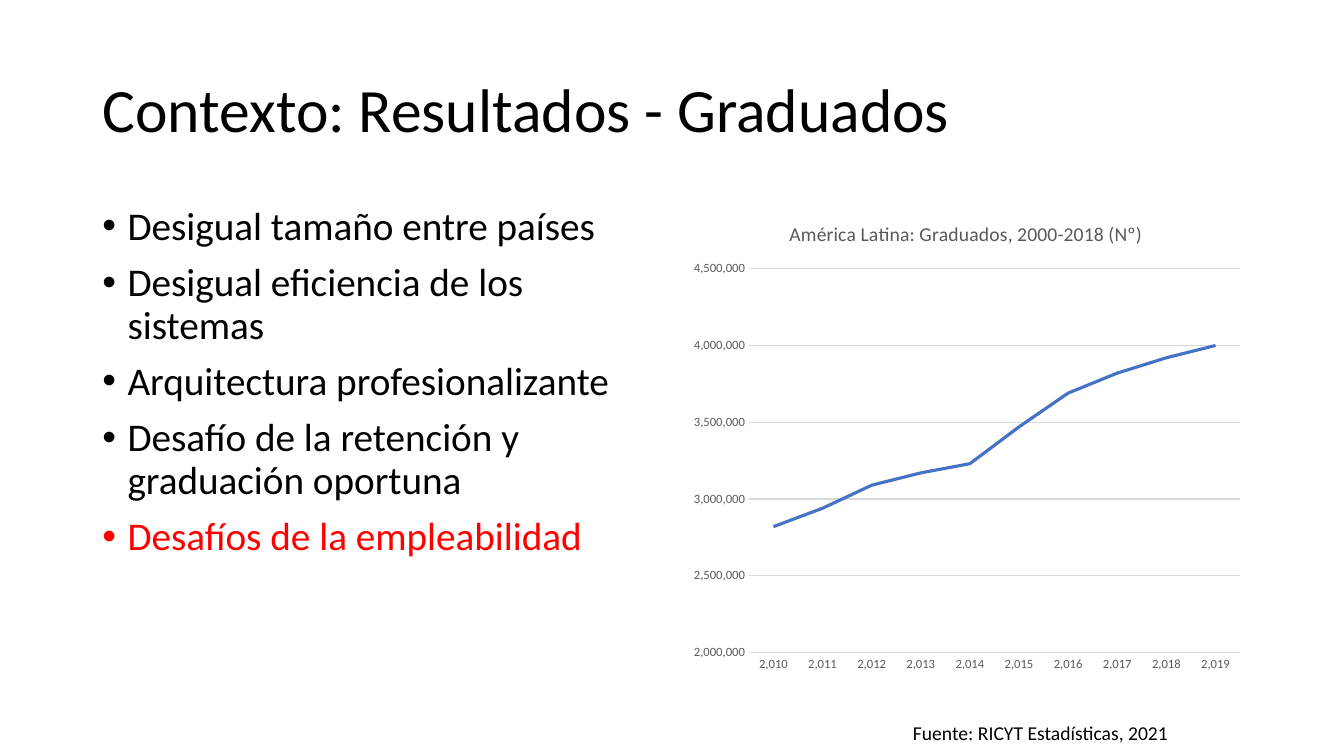
from dataclasses import dataclass

from lxml import etree
from pptx import Presentation
from pptx import util as u
from pptx.chart.data import CategoryChartData
from pptx.dml.color import RGBColor
from pptx.enum import chart as charts, text
from pptx.oxml import parse_xml
from pptx.oxml.ns import nsdecls, qn

EMU_PER_PX = 9525
FONT = "Calibri"
COLORS = {
    "text": "000000",
    "accent": "FF0000",
    "label": "595959",
    "grid": "D9D9D9",
    "series": "4472C4",
}


@dataclass
class Box:
    left: int
    top: int
    width: int
    height: int

    def emu(self) -> list[int]:
        return [px * EMU_PER_PX for px in (self.left, self.top, self.width, self.height)]


@dataclass
class Line:
    words: str
    color: str = "text"


@dataclass
class TextBlock:
    box: Box
    lines: list[Line]
    size: int
    anchor: text.MSO_ANCHOR = text.MSO_ANCHOR.TOP
    wrap: bool = True
    bullets: bool = False
    line_spacing: float = 1.0


TEXT_BLOCKS = [
    TextBlock(Box(88, 38, 1104, 139), [Line("Contexto: Resultados - Graduados")], 44,
              anchor=text.MSO_ANCHOR.MIDDLE, line_spacing=0.9),
    TextBlock(Box(88, 192, 544, 457), [
        Line("Desigual tamaño entre países"),
        Line("Desigual eficiencia de los sistemas"),
        Line("Arquitectura profesionalizante"),
        Line("Desafío de la retención y graduación oportuna"),
        Line("Desafíos de la empleabilidad", "accent"),
    ], 28, bullets=True, line_spacing=0.9),
    TextBlock(Box(860, 682, 265, 33), [Line("Fuente: RICYT Estadísticas, 2021")], 14, wrap=False),
]

CHART_BOX = Box(648, 192, 544, 457)
CHART_TITLE = "América Latina: Graduados, 2000-2018 (Nº)"
FIRST_YEAR = 2010
GRADUATES = [2820000, 2940000, 3090000, 3170000, 3230000,
             3470000, 3690000, 3820000, 3920000, 4000000]
NUMBER_FORMAT = "#,##0"
PLOT_AREA = {"x": 0.12, "y": 0.14, "w": 0.86, "h": 0.8}


def rgb(name: str) -> RGBColor:
    return RGBColor.from_string(COLORS[name])


def style_font(font, size: int, color: str) -> None:
    font.name = FONT
    font.size = u.Pt(size)
    font.bold = False
    font.color.rgb = rgb(color)


def style_line(line, color: str, width: float) -> None:
    line.color.rgb = rgb(color)
    line.width = u.Pt(width)


def add_bullet(paragraph) -> None:
    indent = 24 * EMU_PER_PX
    properties = paragraph._p.get_or_add_pPr()
    properties.set("marL", str(indent))
    properties.set("indent", str(-indent))
    font = etree.SubElement(properties, qn("a:buFont"))
    font.set("typeface", "Arial")
    bullet = etree.SubElement(properties, qn("a:buChar"))
    bullet.set("char", "•")


def add_text(slide, block: TextBlock) -> None:
    frame = slide.shapes.add_textbox(*block.box.emu()).text_frame
    frame.word_wrap = block.wrap
    frame.vertical_anchor = block.anchor
    for index, line in enumerate(block.lines):
        paragraph = frame.add_paragraph() if index else frame.paragraphs[0]
        paragraph.line_spacing = block.line_spacing
        if block.bullets:
            paragraph.space_before = u.Pt(10)
            add_bullet(paragraph)
        run = paragraph.add_run()
        run.text = line.words
        style_font(run.font, block.size, line.color)


def style_axis(axis) -> None:
    axis.major_tick_mark = charts.XL_TICK_MARK.NONE
    axis.minor_tick_mark = charts.XL_TICK_MARK.NONE
    style_font(axis.tick_labels.font, 9, "label")
    axis.tick_labels.number_format = NUMBER_FORMAT
    axis.tick_labels.number_format_is_linked = False


def place_plot(chart) -> None:
    plot_area = chart._chartSpace.chart.plotArea
    for old_layout in plot_area.findall(qn("c:layout")):
        plot_area.remove(old_layout)
    modes = '<c:xMode val="edge"/><c:yMode val="edge"/>'
    sizes = "".join(f'<c:{key} val="{value}"/>' for key, value in PLOT_AREA.items())
    plot_area.insert(0, parse_xml(
        f'<c:layout {nsdecls("c")}><c:manualLayout><c:layoutTarget val="inner"/>'
        f'{modes}{sizes}</c:manualLayout></c:layout>'))


def add_graduates_chart(slide) -> None:
    data = CategoryChartData(number_format=NUMBER_FORMAT)
    data.categories = range(FIRST_YEAR, FIRST_YEAR + len(GRADUATES))
    data.categories.number_format = NUMBER_FORMAT
    data.add_series("Graduados", GRADUATES)
    chart = slide.shapes.add_chart(charts.XL_CHART_TYPE.LINE, *CHART_BOX.emu(), data).chart
    style_font(chart.font, 10, "text")
    chart.has_legend = False

    # Title
    chart.has_title = True
    run = chart.chart_title.text_frame.paragraphs[0].add_run()
    run.text = CHART_TITLE
    style_font(run.font, 14, "label")
    chart.chart_title.include_in_layout = False

    # Axes
    style_axis(chart.category_axis)
    style_line(chart.category_axis.format.line, "grid", 0.75)
    value_axis = chart.value_axis
    style_axis(value_axis)
    value_axis.format.line.fill.background()
    value_axis.minimum_scale = 2000000
    value_axis.maximum_scale = 4500000
    value_axis.major_unit = 500000
    value_axis.has_major_gridlines = True
    style_line(value_axis.major_gridlines.format.line, "grid", 0.75)

    # Series
    chart.plots[0].vary_by_categories = False
    series = chart.plots[0].series[0]
    series.smooth = False
    series.marker.style = charts.XL_MARKER_STYLE.NONE
    style_line(series.format.line, "series", 2.25)
    place_plot(chart)


def main() -> None:
    presentation = Presentation()
    presentation.slide_width = 1280 * EMU_PER_PX
    presentation.slide_height = 720 * EMU_PER_PX
    slide = presentation.slides.add_slide(presentation.slide_layouts[6])
    for block in TEXT_BLOCKS:
        add_text(slide, block)
    add_graduates_chart(slide)
    presentation.save("out.pptx")


if __name__ == "__main__":
    main()
